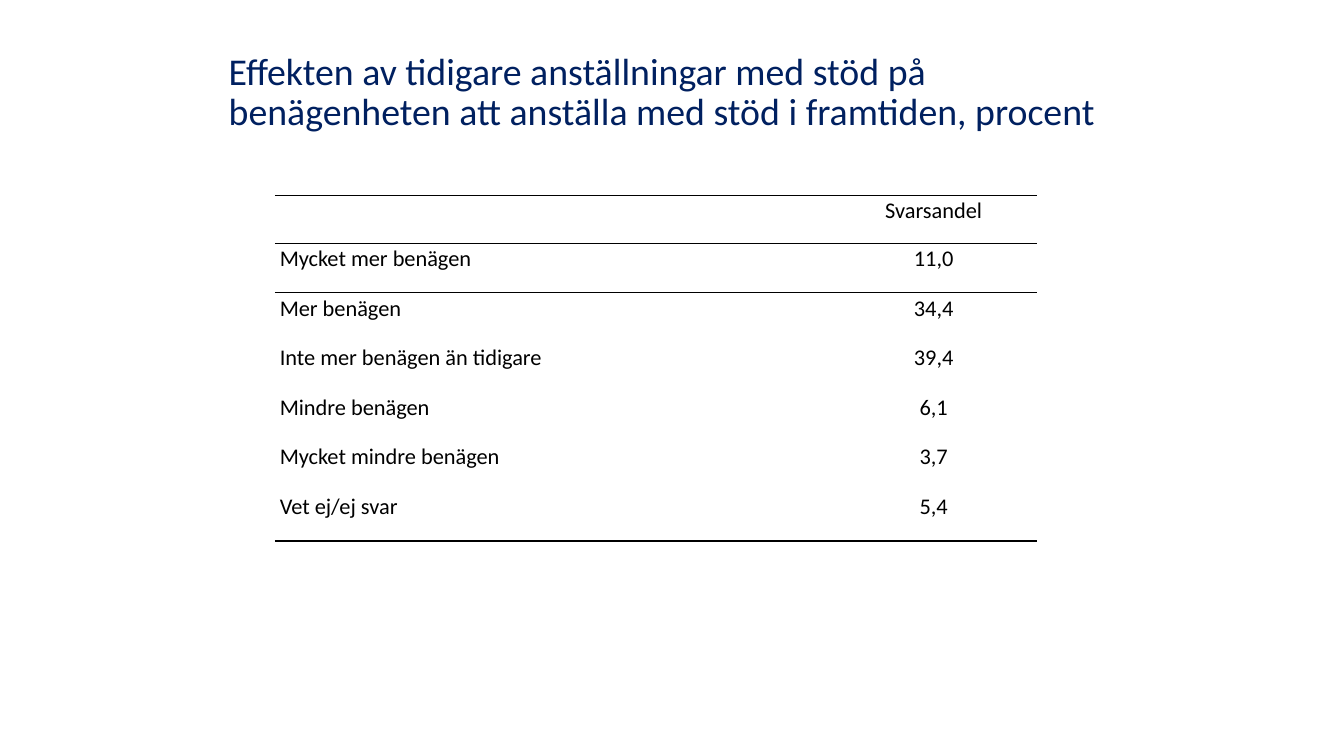
import dataclasses

import lxml.etree
import pptx
import pptx.dml.color
import pptx.enum.text
import pptx.oxml.ns
import pptx.presentation
import pptx.shapes.base
import pptx.slide
import pptx.table
import pptx.text.text
import pptx.util

Cm = pptx.util.Cm
Pt = pptx.util.Pt
Align = pptx.enum.text.PP_ALIGN
Anchor = pptx.enum.text.MSO_ANCHOR


@dataclasses.dataclass(frozen=True)
class Theme:
    font: str = "Calibri"
    title_color: str = "002060"
    ink: str = "000000"
    title_size: float = 27
    table_size: float = 16
    rule_width: float = 1


@dataclasses.dataclass(frozen=True)
class Row:
    label: str
    share: str
    height: float = 1.25
    rules: tuple[str, ...] = ()


THEME = Theme()
TITLE = (
    "Effekten av tidigare anställningar med stöd på "
    "benägenheten att anställa med stöd i framtiden, procent"
)
COLUMN_WIDTHS = (14.0, 5.2)
ROWS = (
    Row("", "Svarsandel", height=1.2, rules=("lnT", "lnB")),
    Row("Mycket mer benägen", "11,0", rules=("lnT",)),
    Row("Mer benägen", "34,4"),
    Row("Inte mer benägen än tidigare", "39,4"),
    Row("Mindre benägen", "6,1"),
    Row("Mycket mindre benägen", "3,7"),
    Row("Vet ej/ej svar", "5,4", rules=("lnB",)),
)


def write_text(
    frame: pptx.text.text.TextFrame,
    text: str,
    *,
    size: float,
    color: str,
    spacing: float,
    align: Align = Align.LEFT,
) -> None:
    para = frame.paragraphs[0]
    para.alignment = align
    para.line_spacing = spacing
    para.font.size = Pt(size)
    if not text:
        # An empty cell takes its line height from the end-of-paragraph size.
        end = lxml.etree.SubElement(para._p, pptx.oxml.ns.qn("a:endParaRPr"))
        end.set("sz", str(int(size * 100)))
        return
    span = para.add_run()
    span.text = text
    span.font.name = THEME.font
    span.font.size = Pt(size)
    span.font.bold = False
    span.font.color.rgb = pptx.dml.color.RGBColor.from_string(color)


def draw_rules(cell: pptx.table._Cell, edges: tuple[str, ...]) -> None:
    """Draw the named edges (lnT, lnB) of a cell; call before filling it."""
    qn = pptx.oxml.ns.qn
    properties = cell._tc.get_or_add_tcPr()
    for edge in edges:
        line = lxml.etree.SubElement(properties, qn(f"a:{edge}"))
        line.set("w", str(Pt(THEME.rule_width)))
        fill = lxml.etree.SubElement(line, qn("a:solidFill"))
        lxml.etree.SubElement(fill, qn("a:srgbClr")).set("val", THEME.ink)


def add_title(page: pptx.slide.Slide) -> None:
    title = page.shapes.title
    title.left, title.top = Cm(5.51), Cm(0.76)
    title.width, title.height = Cm(22.83), Cm(3.18)
    frame = title.text_frame
    frame.word_wrap = True
    frame.vertical_anchor = Anchor.MIDDLE
    write_text(frame, TITLE, size=THEME.title_size, color=THEME.title_color, spacing=0.9)


def fill_cell(
    cell: pptx.table._Cell, text: str, align: Align, rules: tuple[str, ...]
) -> None:
    cell.margin_left = cell.margin_right = Cm(0.12)
    cell.margin_top = cell.margin_bottom = 0
    cell.vertical_anchor = Anchor.TOP
    draw_rules(cell, rules)
    cell.fill.background()
    write_text(
        cell.text_frame, text,
        size=THEME.table_size, color=THEME.ink, spacing=1.07, align=align,
    )


def add_answer_table(page: pptx.slide.Slide) -> None:
    table = page.shapes.add_table(
        len(ROWS), len(COLUMN_WIDTHS), Cm(6.93), Cm(4.93),
        Cm(sum(COLUMN_WIDTHS)), Cm(sum(row.height for row in ROWS)),
    ).table
    table.first_row = table.horz_banding = False
    # "No Style, No Grid" leaves only the rules drawn on the cells.
    style = table._tbl.tblPr.find(pptx.oxml.ns.qn("a:tableStyleId"))
    style.text = "{2D5ABB26-0587-4C30-8999-92F81FD0307C}"
    for column, width in zip(table.columns, COLUMN_WIDTHS):
        column.width = Cm(width)
    for index, row in enumerate(ROWS):
        table.rows[index].height = Cm(row.height)
        fill_cell(table.cell(index, 0), row.label, Align.LEFT, row.rules)
        fill_cell(table.cell(index, 1), row.share, Align.CENTER, row.rules)


def main() -> None:
    deck = pptx.Presentation()
    deck.slide_width, deck.slide_height = Cm(33.87), Cm(19.05)
    page = deck.slides.add_slide(deck.slide_layouts.get_by_name("Title Only"))
    add_title(page)
    add_answer_table(page)
    deck.save("out.pptx")


if __name__ == "__main__":
    main()
